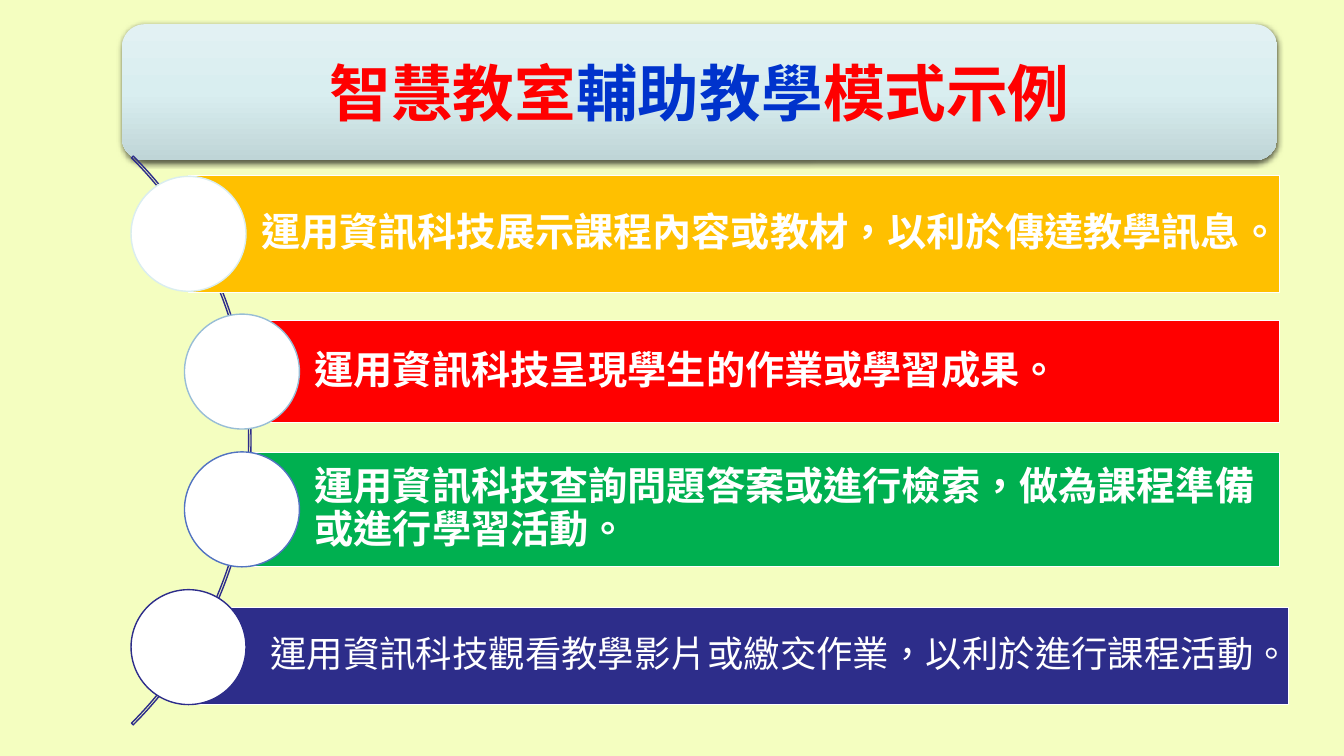
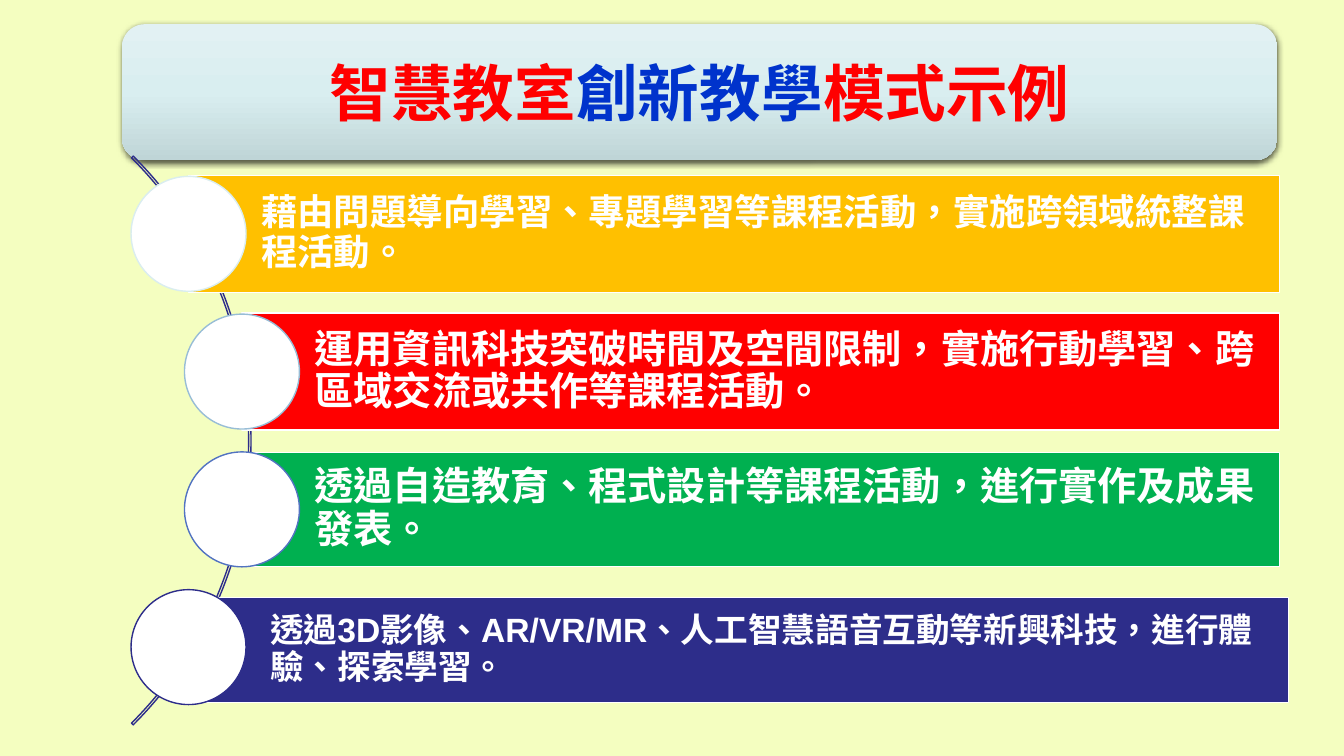
from dataclasses import dataclass

from pptx import Presentation
from pptx.dml.color import RGBColor
from pptx.enum.lang import MSO_LANGUAGE_ID
from pptx.enum.shapes import MSO_SHAPE
from pptx.enum.text import MSO_ANCHOR, PP_ALIGN
from pptx.oxml import parse_xml
from pptx.oxml.ns import nsdecls
from pptx.util import Inches, Pt

ROUNDED = MSO_SHAPE.ROUNDED_RECTANGLE
RECTANGLE = MSO_SHAPE.RECTANGLE
OVAL = MSO_SHAPE.OVAL
BLOCK_ARC = MSO_SHAPE.BLOCK_ARC
MIDDLE = MSO_ANCHOR.MIDDLE
LEFT, CENTER = PP_ALIGN.LEFT, PP_ALIGN.CENTER
CHINESE = MSO_LANGUAGE_ID.TRADITIONAL_CHINESE

FONT = "Arial"
COLORS = {
    "background": "F4FEC0",
    "white": "FFFFFF",
    "shadow": "000000",
    "title": "FF0000",
    "title_accent": "0033CC",
    "amber": "FFC000",
    "red": "FF0000",
    "green": "00B050",
    "navy": "2D2D8A",
    "ring_pale": "DAEDEF",
    "ring_sky": "98BDD6",
    "ring_blue": "5273C1",
}
TITLE_GRADIENT = ((0, "E2F1F3"), (50, "D9EEF0"), (100, "BFD5D7"))

# Boxes are left, top, width, height in inches
TITLE_BOX = (1.21, 0.24, 11.46, 1.35)
LIST_BOX = (1.3, 1.75, 11.39, 5.24)
CIRCLE = 1.14
ARC = 7.98
ARC_OVERLAP = 1.19
# Each row: band colour, ring colour, indent, sideways shift of the band
ROWS = (
    ("amber", "ring_pale", 0, 0),
    ("red", "ring_sky", 0.53, 0),
    ("green", "ring_blue", 0.53, 0),
    ("navy", "navy", 0, 0.09),
)


@dataclass
class Item:
    text: str
    height: float
    size: int = 28
    bold: bool = True
    drop: float = 0  # distance of the band's middle below the circle's middle


SLIDES = (
    ("輔助教學", (
        Item("運用資訊科技展示課程內容或教材，以利於傳達教學訊息。", 1.16),
        Item("運用資訊科技呈現學生的作業或學習成果。", 1.01),
        Item("運用資訊科技查詢問題答案或進行檢索，做為課程準備或進行學習活動。", 1.13),
        Item("運用資訊科技觀看教學影片或繳交作業，以利於進行課程活動。", 0.96,
             size=26, bold=False, drop=0.09),
    )),
    ("創新教學", (
        Item("藉由問題導向學習、專題學習等課程活動，實施跨領域統整課程活動。", 1.16, size=26),
        Item("運用資訊科技突破時間及空間限制，實施行動學習、跨區域交流或共作等課程活動。", 1.16),
        Item("透過自造教育、程式設計等課程活動，進行實作及成果發表。", 1.13),
        Item("透過3D影像、AR/VR/MR、人工智慧語音互動等新興科技，進行體驗、探索學習。", 1.04,
             size=24, drop=0.03),
    )),
)


def color(name):
    return RGBColor.from_string(COLORS[name])


def add_shape(slide, kind, box, fill=None, line=None):
    shape = slide.shapes.add_shape(kind, *(Inches(length) for length in box))
    shape.shadow.inherit = False
    if fill:
        shape.fill.solid()
        shape.fill.fore_color.rgb = color(fill)
    else:
        shape.fill.background()
    if line:
        shape.line.color.rgb = color(line)
        shape.line.width = Pt(1)
    else:
        shape.line.fill.background()
    return shape


def add_run(paragraph, text, size, color_name, bold=True):
    run = paragraph.add_run()
    run.text = text
    font = run.font
    font.name, font.size, font.bold = FONT, Pt(size), bold
    font.language_id = CHINESE
    font.color.rgb = color(color_name)


def style_title_panel(shape):
    """Give the panel its three-stop gradient and soft shadow."""
    stops = "".join(
        f'<a:gs pos="{position * 1000}"><a:srgbClr val="{value}"/></a:gs>'
        for position, value in TITLE_GRADIENT
    )
    properties = shape.element.spPr
    properties.replace(properties.find("{*}noFill"), parse_xml(
        f'<a:gradFill {nsdecls("a")} rotWithShape="1"><a:gsLst>{stops}</a:gsLst>'
        '<a:lin ang="5400000" scaled="0"/></a:gradFill>'
    ))
    properties.find("{*}effectLst").append(parse_xml(
        f'<a:outerShdw {nsdecls("a")} blurRad="{Pt(4.5)}" dist="{Pt(1.5)}" '
        f'dir="5400000" rotWithShape="0"><a:srgbClr val="{COLORS["shadow"]}">'
        '<a:alpha val="63000"/></a:srgbClr></a:outerShdw>'
    ))


def add_title(slide, box, topic):
    panel = add_shape(slide, ROUNDED, box)
    style_title_panel(panel)
    panel.text_frame.vertical_anchor = MIDDLE
    paragraph = panel.text_frame.paragraphs[0]
    paragraph.alignment = CENTER
    for text, color_name in (
        ("智慧教室", "title"), (topic, "title_accent"), ("模式示例", "title"),
    ):
        add_run(paragraph, text, 44, color_name)


def add_band(slide, box, fill, item):
    band = add_shape(slide, RECTANGLE, box, fill, "white")
    frame = band.text_frame
    frame.word_wrap = True
    frame.vertical_anchor = MIDDLE
    frame.margin_left = Inches(0.72)
    inset = Inches(0.08 if item.size == 28 else 0.07)
    frame.margin_top = frame.margin_right = frame.margin_bottom = inset
    paragraph = frame.paragraphs[0]
    paragraph.alignment = LEFT
    paragraph.line_spacing = 0.9
    add_run(paragraph, item.text, item.size, "white", item.bold)


def add_curved_list(slide, box, items):
    """Bands with circles, strung along an arc bulging in from the left."""
    left, top, width, height = box
    arc_box = (left + ARC_OVERLAP - ARC, top + (height - ARC) / 2, ARC, ARC)
    arc = add_shape(slide, BLOCK_ARC, arc_box, line="navy")
    for index, value in enumerate((189, 27, 0.003)):
        arc.adjustments[index] = value

    pitch = (height - CIRCLE) / (len(items) - 1)
    for index, (item, row) in enumerate(zip(items, ROWS)):
        fill, ring, indent, shift = row
        circle_left = left + indent
        circle_top = top + index * pitch
        band_left = circle_left + CIRCLE / 2
        band_top = circle_top + (CIRCLE - item.height) / 2 + item.drop
        band_width = left + width - band_left
        add_band(slide, (band_left + shift, band_top, band_width, item.height), fill, item)
        add_shape(slide, OVAL, (circle_left, circle_top, CIRCLE, CIRCLE), "white", ring)


def add_example_slide(presentation, topic, items):
    slide = presentation.slides.add_slide(presentation.slide_layouts[6])
    slide.background.fill.solid()
    slide.background.fill.fore_color.rgb = color("background")
    add_title(slide, TITLE_BOX, topic)
    add_curved_list(slide, LIST_BOX, items)


def main():
    presentation = Presentation()
    presentation.slide_width = Inches(13.33)
    presentation.slide_height = Inches(7.5)
    for topic, items in SLIDES:
        add_example_slide(presentation, topic, items)
    presentation.save("out.pptx")


if __name__ == "__main__":
    main()
